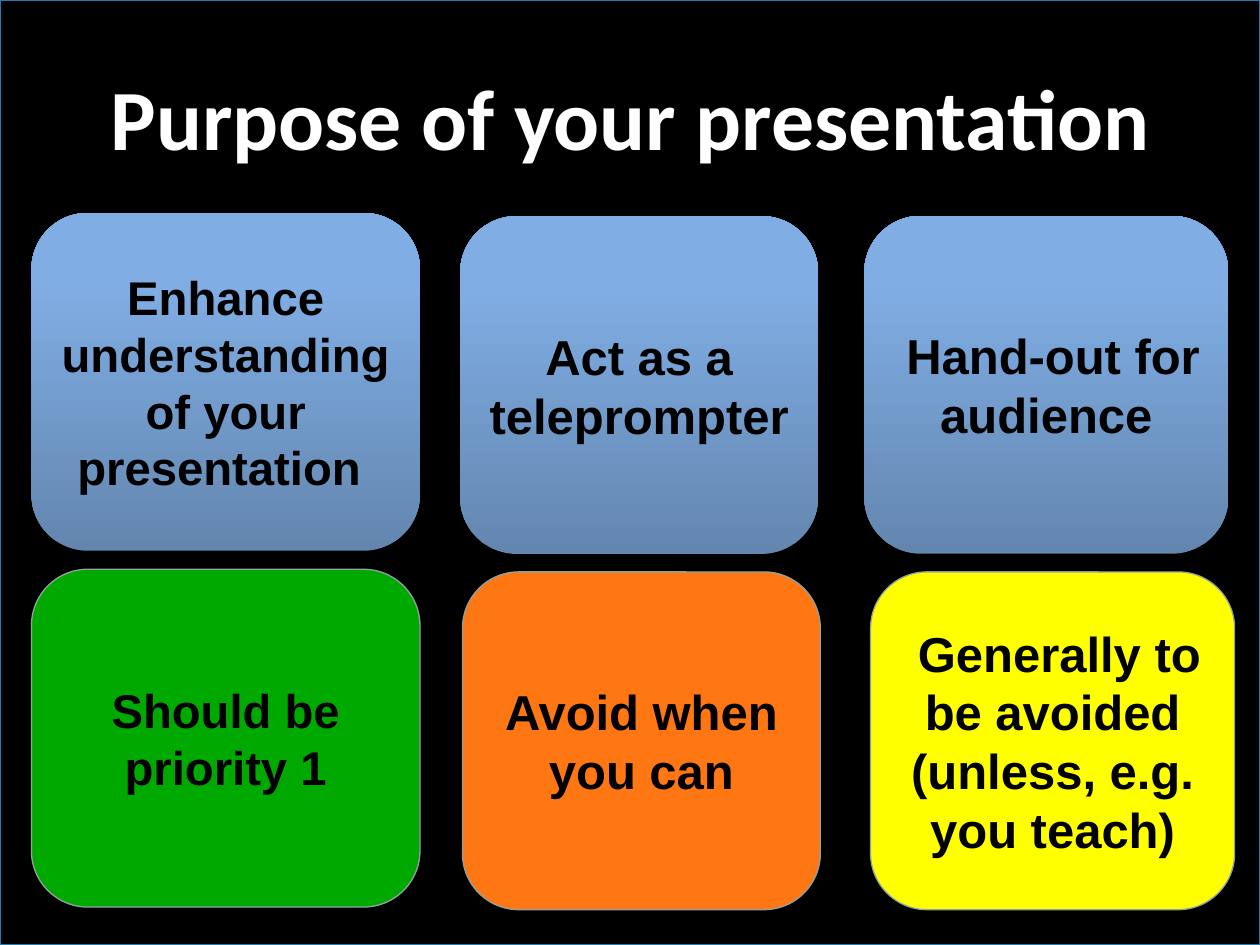
"""Build the slide on the purposes of a presentation."""
from copy import deepcopy
from dataclasses import dataclass

from pptx import Presentation
from pptx.dml.color import RGBColor as Color
from pptx.enum.shapes import MSO_SHAPE as ShapeKind
from pptx.enum.text import MSO_ANCHOR as Anchor, PP_ALIGN as Align
from pptx.oxml.ns import qn
from pptx.shapes.autoshape import Shape
from pptx.slide import Slide
from pptx.text.text import Font
from pptx.util import Pt


@dataclass(frozen=True)
class Theme:
    """Colours, fonts and type sizes of the slide."""
    page: Color = Color.from_string("F8F8F8")
    backdrop: Color = Color.from_string("000000")
    backdrop_line: Color = Color.from_string("237BAD")
    title: Color = Color.from_string("FFFFFF")
    text: Color = Color.from_string("000000")
    card_line: Color = Color.from_string("91A2A3")
    green: Color = Color.from_string("00A900")
    orange: Color = Color.from_string("FF7713")
    yellow: Color = Color.from_string("FFFF00")
    gradient: tuple[tuple[float, Color], ...] = (
        (0, Color.from_string("6386AF")),
        (0.8, Color.from_string("80ADE4")),
        (1, Color.from_string("7FAEE7")),
    )
    title_font: str = "Calibri"
    card_font: str = "Arial"
    title_size: float = 49
    line_width: float = 0.75


@dataclass(frozen=True)
class Card:
    """A rounded card; without a colour it takes the gradient."""
    text: str
    left: float
    top: float
    width: float
    size: float
    color: Color | None = None


THEME = Theme()
SLIDE_WIDTH, SLIDE_HEIGHT = 720, 540
CARD_HEIGHT = 193
WIDTHS = (222, 204.5, 208)
CARDS = (
    Card("Enhance understanding of your presentation ", 18, 121.7, WIDTHS[0], 27),
    Card("Act as a teleprompter", 263, 123.5, WIDTHS[1], 28),
    Card(" Hand-out for audience", 493.9, 123.4, WIDTHS[2], 28),
    Card("Should be priority 1", 18, 325.3, WIDTHS[0], 27, THEME.green),
    Card("Avoid when you can", 264.3, 326.8, WIDTHS[1], 28, THEME.orange),
    Card(" Generally to be avoided (unless, e.g. you teach)",
         497.5, 326.8, WIDTHS[2], 28, THEME.yellow),
)


def style_font(font: Font, name: str, size: float, color: Color) -> None:
    """Set a bold font."""
    font.name, font.size, font.bold = name, Pt(size), True
    font.color.rgb = color


def fill_solid(shape: Shape, color: Color, line: Color) -> None:
    """Give a shape a plain fill and a thin outline."""
    shape.fill.solid()
    shape.fill.fore_color.rgb = color
    shape.line.color.rgb = line
    shape.line.width = Pt(THEME.line_width)


def fill_gradient(shape: Shape) -> None:
    """Give a shape the upward gradient and no outline."""
    shape.line.fill.background()
    shape.fill.gradient()
    shape.fill.gradient_angle = 90
    stop_list = shape._element.spPr.find(qn("a:gradFill")).find(qn("a:gsLst"))
    stop_list.append(deepcopy(stop_list[-1]))
    for stop, (position, color) in zip(shape.fill.gradient_stops, THEME.gradient):
        stop.position = position
        stop.color.rgb = color


def draw_backdrop(slide: Slide) -> None:
    """Cover the page with a dark rectangle behind everything else."""
    backdrop = slide.shapes.add_shape(
        ShapeKind.RECTANGLE, 0, 0, Pt(SLIDE_WIDTH), Pt(SLIDE_HEIGHT))
    backdrop.shadow.inherit = False
    fill_solid(backdrop, THEME.backdrop, THEME.backdrop_line)
    slide.shapes._spTree.insert(2, backdrop._element)


def draw_title(slide: Slide, text: str) -> None:
    """Write the title in its placeholder."""
    title = slide.shapes.title
    title.left, title.top, title.width, title.height = map(Pt, (36, 21.6, 648, 90))
    title.text_frame.text = text
    title.text_frame.vertical_anchor = Anchor.MIDDLE
    paragraph = title.text_frame.paragraphs[0]
    paragraph.alignment = Align.CENTER
    style_font(paragraph.font, THEME.title_font, THEME.title_size, THEME.title)


def draw_card(slide: Slide, card: Card) -> None:
    """Draw one card with its centred text."""
    shape = slide.shapes.add_shape(
        ShapeKind.ROUNDED_RECTANGLE,
        *map(Pt, (card.left, card.top, card.width, CARD_HEIGHT)))
    shape.shadow.inherit = False
    if card.color is None:
        fill_gradient(shape)
    else:
        fill_solid(shape, card.color, THEME.card_line)
    frame = shape.text_frame
    frame.word_wrap = True
    frame.vertical_anchor = Anchor.MIDDLE
    frame.margin_left = frame.margin_right = frame.margin_top = frame.margin_bottom = 0
    frame.text = card.text
    paragraph = frame.paragraphs[0]
    paragraph.alignment = Align.CENTER
    style_font(paragraph.font, THEME.card_font, card.size, THEME.text)


def main() -> None:
    """Build and save the presentation."""
    presentation = Presentation()
    presentation.slide_width = Pt(SLIDE_WIDTH)
    presentation.slide_height = Pt(SLIDE_HEIGHT)
    slide = presentation.slides.add_slide(presentation.slide_layouts[5])
    slide.background.fill.solid()
    slide.background.fill.fore_color.rgb = THEME.page
    draw_backdrop(slide)
    draw_title(slide, "Purpose of your presentation")
    for card in CARDS:
        draw_card(slide, card)
    presentation.save("out.pptx")


if __name__ == "__main__":
    main()
